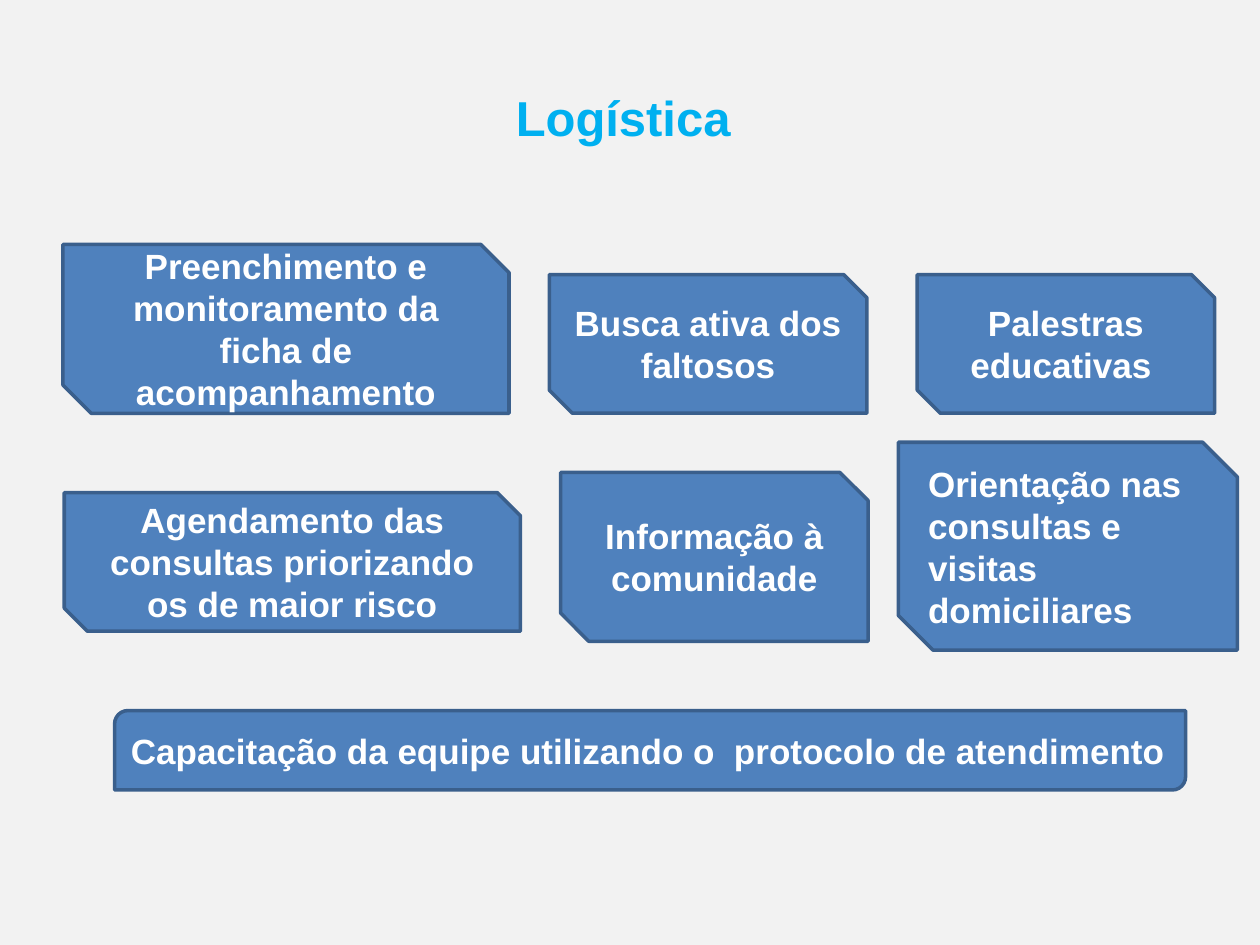
from pptx import Presentation
from pptx import util as u
from pptx.dml.color import RGBColor
from pptx.enum import shapes, text

ALIGN = text.PP_ALIGN
SNIPPED = shapes.MSO_SHAPE.SNIP_2_DIAG_RECTANGLE
ROUNDED = shapes.MSO_SHAPE.ROUND_2_DIAG_RECTANGLE


def colour(hex_value):
    return RGBColor.from_string(hex_value)


def write(shape, words, size=20, color="FFFFFF", align=ALIGN.CENTER):
    frame = shape.text_frame
    frame.word_wrap = True
    frame.vertical_anchor = text.MSO_ANCHOR.MIDDLE
    paragraph = frame.paragraphs[0]
    paragraph.alignment = align
    run = paragraph.add_run()
    run.text = words
    run.font.name = "Arial"
    run.font.size = u.Pt(size)
    run.font.bold = True
    run.font.color.rgb = colour(color)


class SlideBuilder:
    background = "F2F2F2"
    accent = "00B0F0"
    fill = "4F81BD"
    line = "3A5F8C"

    def __init__(self, slide):
        self.slide = slide
        slide.background.fill.solid()
        slide.background.fill.fore_color.rgb = colour(self.background)

    def title(self, words, *box):
        shape = self.slide.shapes.add_textbox(*map(u.Inches, box))
        write(shape, words, size=28, color=self.accent)

    def card(self, words, *box, kind=SNIPPED, align=ALIGN.CENTER):
        shape = self.slide.shapes.add_shape(kind, *map(u.Inches, box))
        shape.shadow.inherit = False
        shape.fill.solid()
        shape.fill.fore_color.rgb = colour(self.fill)
        shape.line.color.rgb = colour(self.line)
        shape.line.width = u.Pt(2)
        write(shape, words, align=align)


def main():
    presentation = Presentation()
    presentation.slide_width = u.Inches(10)
    presentation.slide_height = u.Inches(7.5)
    builder = SlideBuilder(
        presentation.slides.add_slide(presentation.slide_layouts[6]))

    # Title
    builder.title("Logística ", 0.5, 0.3, 9, 1.25)

    # Upper row of actions
    builder.card("Preenchimento e monitoramento da ficha de acompanhamento",
                 0.5, 1.94, 3.54, 1.34)
    builder.card("Busca ativa dos faltosos", 4.36, 2.18, 2.52, 1.1)
    builder.card("Palestras educativas ", 7.28, 2.18, 2.36, 1.1)

    # Lower row of actions
    builder.card("Agendamento das consultas priorizando os de maior risco",
                 0.51, 3.91, 3.62, 1.1)
    builder.card("Informação à comunidade", 4.45, 3.75, 2.44, 1.34)
    builder.card("Orientação nas consultas e visitas domiciliares",
                 7.13, 3.51, 2.69, 1.65, align=ALIGN.LEFT)

    # Team training bar
    builder.card("Capacitação da equipe utilizando o  protocolo de atendimento",
                 0.91, 5.64, 8.5, 0.63, kind=ROUNDED, align=ALIGN.JUSTIFY)

    presentation.save("out.pptx")


if __name__ == "__main__":
    main()
